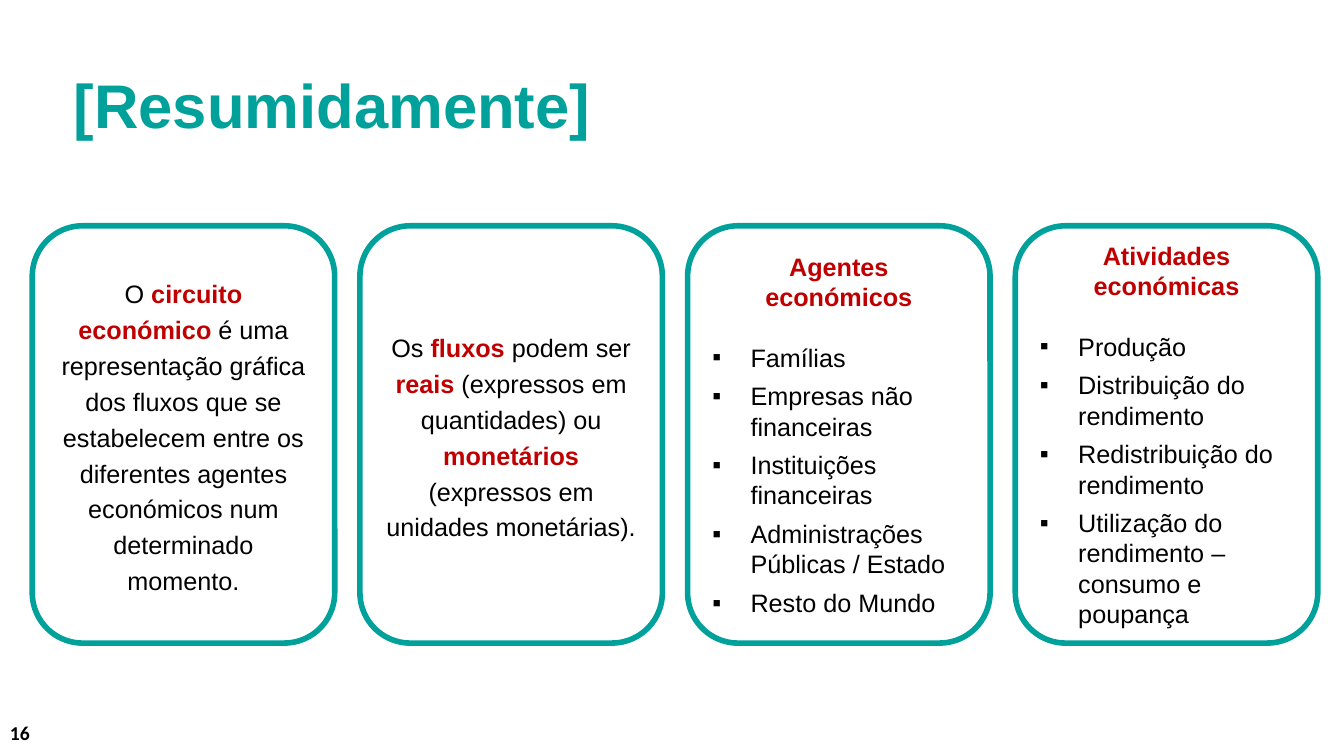
"""Builds the summary slide with four rounded cards."""
from dataclasses import dataclass

from lxml import etree
from pptx import Presentation
from pptx import util as u
from pptx.dml.color import RGBColor
from pptx.enum import shapes, text
from pptx.oxml import ns


@dataclass(frozen=True)
class Theme:
    """Colours, fonts and type sizes of the slide."""
    teal: str = "00A09B"
    red: str = "C00000"
    black: str = "000000"
    white: str = "FFFFFF"
    font: str = "Arial"
    number_font: str = "Calibri"
    title_size: int = 44
    body_size: int = 18
    number_size: int = 14
    border: int = 4


class SummarySlide:
    """Draws the elements of one slide in a shared style."""

    def __init__(self, page, theme):
        """Keep the slide and its theme."""
        self.page = page
        self.theme = theme

    def style(self, font, size, color, bold=False, name=None):
        """Format one font."""
        font.name = name or self.theme.font
        font.size = u.Pt(size)
        font.bold = bold
        font.color.rgb = RGBColor.from_string(color)

    def title(self, wording, left, top, width, height):
        """Fill and place the title placeholder."""
        box = self.page.shapes.title
        box.left, box.top, box.width, box.height = map(u.Inches, (left, top, width, height))
        frame = box.text_frame
        frame.text = wording
        frame.auto_size = text.MSO_AUTO_SIZE.NONE
        frame.vertical_anchor = text.MSO_ANCHOR.TOP
        para = frame.paragraphs[0]
        para.alignment = text.PP_ALIGN.LEFT
        para.line_spacing = 0.9
        self.style(para.runs[0].font, self.theme.title_size, self.theme.teal, True)

    def card(self, left, top, width, height):
        """Add an outlined rounded card and return its text frame."""
        box = self.page.shapes.add_shape(
            shapes.MSO_SHAPE.ROUNDED_RECTANGLE, *map(u.Inches, (left, top, width, height)))
        box.shadow.inherit = False
        box.fill.solid()
        box.fill.fore_color.rgb = RGBColor.from_string(self.theme.white)
        box.line.color.rgb = RGBColor.from_string(self.theme.teal)
        box.line.width = u.Pt(self.theme.border)
        frame = box.text_frame
        frame.word_wrap = True
        frame.vertical_anchor = text.MSO_ANCHOR.MIDDLE
        return frame

    def statement(self, frame, spans):
        """Write a centred sentence from (wording, is key term) spans."""
        para = frame.paragraphs[0]
        para.alignment = text.PP_ALIGN.CENTER
        para.line_spacing = u.Pt(25.6)
        for wording, key in spans:
            span = para.add_run()
            span.text = wording
            color = self.theme.red if key else self.theme.black
            self.style(span.font, self.theme.body_size, color, key)

    def bullet(self, para):
        """Give a paragraph a square bullet with a hanging indent."""
        props = para._p.get_or_add_pPr()
        props.set("marL", str(u.Inches(0.38)))
        props.set("indent", str(u.Inches(-0.38)))
        color = etree.SubElement(props, ns.qn("a:buClr"))
        etree.SubElement(color, ns.qn("a:srgbClr"), val=self.theme.black)
        etree.SubElement(props, ns.qn("a:buFont"), typeface=self.theme.font)
        etree.SubElement(props, ns.qn("a:buChar"), char="▪")

    def listing(self, frame, heading, items):
        """Write a centred heading above a bulleted list."""
        frame.text = "\n".join([heading, *items])
        head, *rows = frame.paragraphs
        head.alignment = text.PP_ALIGN.CENTER
        head.space_after = u.Pt(21.6)
        self.style(head.runs[0].font, self.theme.body_size, self.theme.red, True)
        for para in rows:
            self.bullet(para)
            para.alignment = text.PP_ALIGN.LEFT
            self.style(para.runs[0].font, self.theme.body_size, self.theme.black)
        for para in rows[:-1]:
            para.space_after = u.Pt(6)

    def number(self, wording, left, top, width, height):
        """Add the page number."""
        box = self.page.shapes.add_textbox(*map(u.Inches, (left, top, width, height)))
        frame = box.text_frame
        frame.word_wrap = True
        frame.text = wording
        self.style(frame.paragraphs[0].runs[0].font, self.theme.number_size,
                   self.theme.black, True, self.theme.number_font)


STATEMENTS = [
    [("O ", False), ("circuito económico ", True),
     ("é uma representação gráfica dos fluxos que se estabelecem entre os "
      "diferentes agentes económicos num determinado momento.", False)],
    [("Os ", False), ("fluxos", True), (" podem ser ", False), ("reais ", True),
     ("(expressos em quantidades) ou ", False), ("monetários", True),
     (" (expressos em unidades monetárias).", False)],
]
LISTINGS = [
    ("Agentes económicos",
     ["Famílias", "Empresas não financeiras", "Instituições financeiras",
      "Administrações Públicas / Estado", "Resto do Mundo"]),
    ("Atividades económicas",
     ["Produção", "Distribuição do rendimento", "Redistribuição do rendimento",
      "Utilização do rendimento – consumo e poupança"]),
]


def main():
    """Build and save the deck."""
    deck = Presentation()
    deck.slide_width, deck.slide_height = u.Inches(13.33), u.Inches(7.5)
    page = deck.slides.add_slide(deck.slide_layouts[5])
    summary = SummarySlide(page, Theme())
    summary.title("[Resumidamente]", 0.63, 0.7, 12.24, 1.32)
    width, gap = 3, 0.25
    frames = [summary.card(0.32 + column * (width + gap), 2.24, width, 4.14)
              for column in range(len(STATEMENTS) + len(LISTINGS))]
    for frame, spans in zip(frames, STATEMENTS):
        summary.statement(frame, spans)
    for frame, (heading, items) in zip(frames[len(STATEMENTS):], LISTINGS):
        summary.listing(frame, heading, items)
    summary.number("16", 0, 7.1, 3, 0.4)
    deck.save("out.pptx")


if __name__ == "__main__":
    main()
